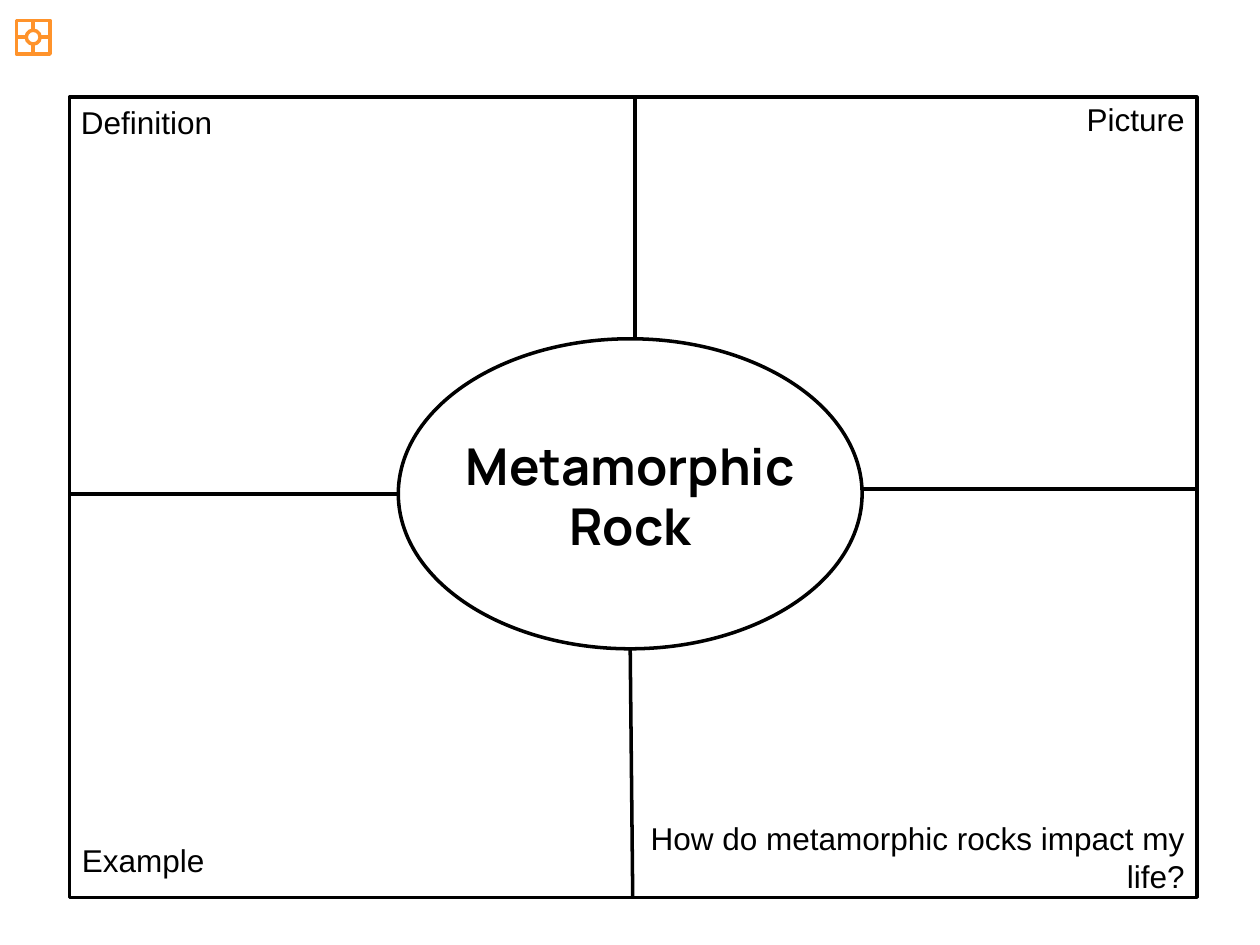
from dataclasses import dataclass

import pptx
import pptx.dml.color
import pptx.enum.shapes
import pptx.enum.text
import pptx.oxml
import pptx.util
from lxml import etree

Cm = pptx.util.Cm
Pt = pptx.util.Pt
Color = pptx.dml.color.RGBColor
Align = pptx.enum.text.PP_ALIGN
Shape = pptx.enum.shapes.MSO_SHAPE


@dataclass(frozen=True)
class Theme:
    ink: Color = Color(0, 0, 0)
    accent: Color = Color(0xFF, 0x93, 0x2B)
    paper: Color = Color(0xFF, 0xFF, 0xFF)
    line_width: float = 2
    label_font: str = "Arial"
    label_size: float = 18
    term_font: str = "Manrope"
    term_size: float = 29


@dataclass(frozen=True)
class Box:
    left: float
    top: float
    width: float
    height: float

    @property
    def right(self):
        return self.left + self.width

    @property
    def bottom(self):
        return self.top + self.height

    @property
    def center(self):
        return self.left + self.width / 2, self.top + self.height / 2

    def inside(self, left, top, width, height):
        return Box(self.left + left, self.top + top, width, height)

    def lengths(self):
        return Cm(self.left), Cm(self.top), Cm(self.width), Cm(self.height)


THEME = Theme()


def add_outline(slide, kind, box, color, filled):
    shape = slide.shapes.add_shape(kind, *box.lengths())
    shape.shadow.inherit = False
    if filled:
        shape.fill.solid()
        shape.fill.fore_color.rgb = THEME.paper
    else:
        shape.fill.background()
    shape.line.color.rgb = color
    shape.line.width = Pt(THEME.line_width)


def add_line(slide, start, end, color):
    connector = slide.shapes.add_connector(
        pptx.enum.shapes.MSO_CONNECTOR.STRAIGHT, *map(Cm, start + end))
    connector.line.color.rgb = color
    connector.line.width = Pt(THEME.line_width)
    properties = connector._element.spPr
    etree.SubElement(properties, pptx.oxml.ns.qn("a:effectLst"))


def add_text(slide, box, text, align, font, size, bold=False):
    shape = slide.shapes.add_textbox(*box.lengths())
    frame = shape.text_frame
    frame.word_wrap = True
    frame.auto_size = pptx.enum.text.MSO_AUTO_SIZE.SHAPE_TO_FIT_TEXT
    paragraph = frame.paragraphs[0]
    paragraph.alignment = align
    run = paragraph.add_run()
    run.text = text
    run.font.name = font
    run.font.size = Pt(size)
    run.font.bold = bold
    run.font.color.rgb = THEME.ink


def add_frayer_frame(slide, box, oval, color, top_shift=0, bottom_shift=0, right_shift=0):
    x, y = oval.center
    add_outline(slide, Shape.RECTANGLE, box, color, filled=False)
    spokes = [
        ((x + top_shift, box.top), (x + top_shift, oval.top)),
        ((x, oval.bottom), (x + bottom_shift, box.bottom)),
        ((box.left, y), (oval.left, y)),
        ((oval.right, y + right_shift), (box.right, y + right_shift)),
    ]
    for start, end in spokes:
        add_line(slide, start, end, color)
    add_outline(slide, Shape.OVAL, oval, color, filled=True)


def add_icon(slide, box):
    add_frayer_frame(slide, box, box.inside(0.2, 0.2, 0.28, 0.28), THEME.accent)


def add_organizer(slide, box):
    oval = box.inside(6.63, 4.87, 9.35, 6.25)
    add_frayer_frame(slide, box, oval, THEME.ink,
                     top_shift=0.1, bottom_shift=0.05, right_shift=-0.1)
    labels = [
        ("Definition", box.inside(-0.02, 0, 3.18, 1.02), Align.LEFT),
        ("Example", box.inside(0, 14.86, 3, 1.02), Align.LEFT),
        ("Picture", box.inside(20.22, -0.06, 2.51, 1.02), Align.RIGHT),
        ("How do metamorphic rocks impact my life?",
         box.inside(10.79, 14.43, 11.94, 1.8), Align.RIGHT),
    ]
    for text, place, align in labels:
        add_text(slide, place, text, align, THEME.label_font, THEME.label_size)
    add_text(slide, oval.inside(0.28, 1.8, 8.79, 2.74), "Metamorphic Rock",
             Align.CENTER, THEME.term_font, THEME.term_size, bold=True)


def main():
    presentation = pptx.Presentation()
    presentation.slide_width = Cm(25.4)
    presentation.slide_height = Cm(19.05)
    slide = presentation.slides.add_slide(presentation.slide_layouts[6])
    slide.background.fill.solid()
    slide.background.fill.fore_color.rgb = THEME.paper
    add_icon(slide, Box(0.33, 0.41, 0.68, 0.68))
    add_organizer(slide, Box(1.4, 1.96, 22.73, 16.13))
    presentation.save("out.pptx")


if __name__ == "__main__":
    main()
